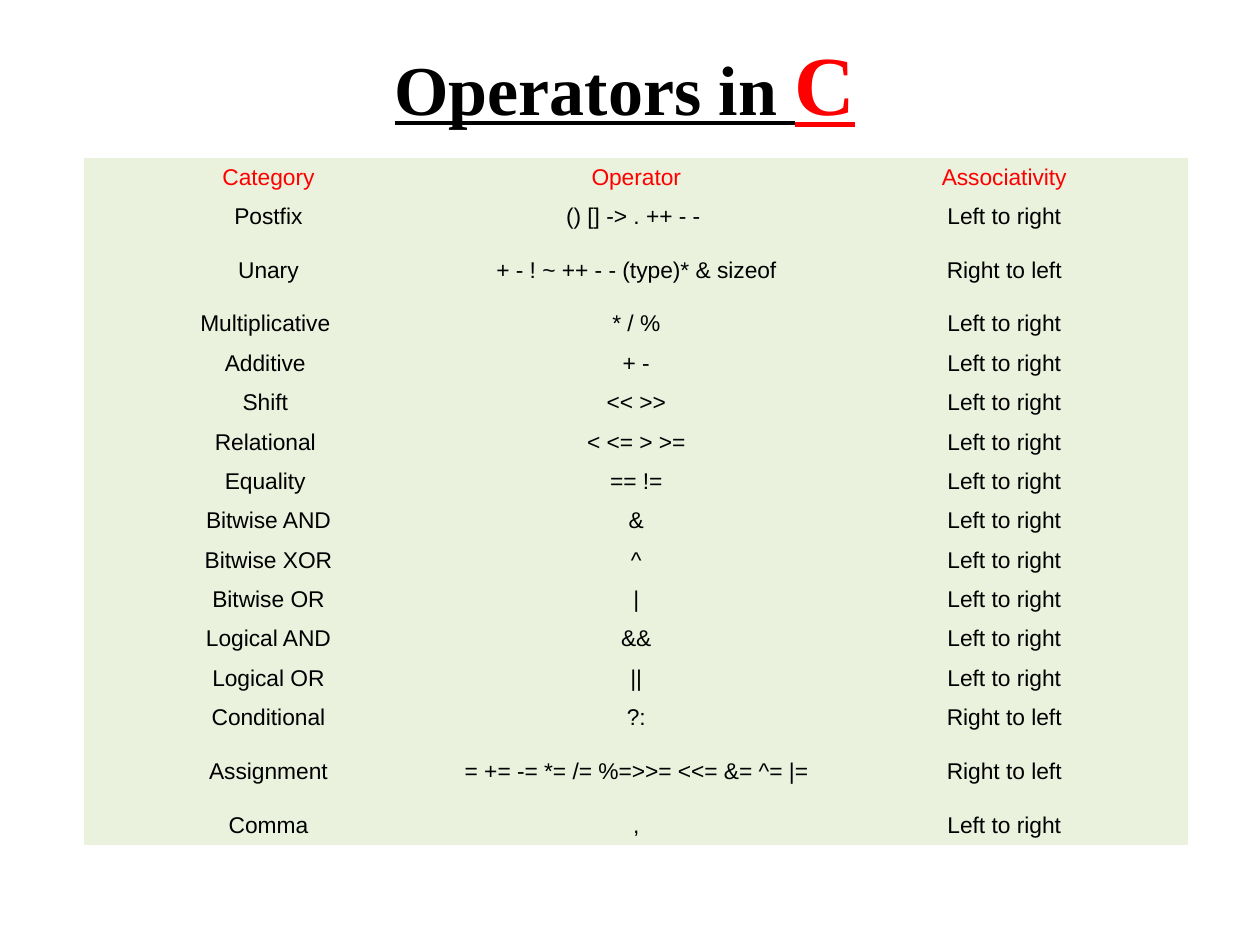
import typing

import pptx
import pptx.dml.color
import pptx.enum.text
import pptx.oxml.ns
import pptx.util

Inches = pptx.util.Inches

BLACK = "000000"
RED = "FF0000"
PALE_GREEN = "EAF1DD"
NO_STYLE_NO_GRID = "{2D5ABB26-0587-4C30-8999-92F81FD0307C}"

LEFT_TO_RIGHT = "Left to right"
RIGHT_TO_LEFT = "Right to left"

COLUMN_WIDTH = 2.92
TABLE_HEIGHT = 5.46
TALL_ROW = 0.54


class OperatorRow(typing.NamedTuple):
    category: str
    operators: str
    associativity: str = LEFT_TO_RIGHT
    tall: bool = False
    color: str = BLACK


OPERATOR_ROWS = [
    OperatorRow("Category", "Operator", "Associativity", color=RED),
    OperatorRow("Postfix", "() [] -> . ++ - - "),
    OperatorRow("Unary", "+ - ! ~ ++ - - (type)* & sizeof", RIGHT_TO_LEFT, tall=True),
    OperatorRow("Multiplicative ", "* / %"),
    OperatorRow("Additive ", "+ -"),
    OperatorRow("Shift ", "<< >>"),
    OperatorRow("Relational ", "< <= > >="),
    OperatorRow("Equality ", "== !="),
    OperatorRow("Bitwise AND", "&"),
    OperatorRow("Bitwise XOR", "^"),
    OperatorRow("Bitwise OR", "|"),
    OperatorRow("Logical AND", "&&"),
    OperatorRow("Logical OR", "||"),
    OperatorRow("Conditional", "?:", RIGHT_TO_LEFT),
    OperatorRow("Assignment", "= += -= *= /= %=>>= <<= &= ^= |=", RIGHT_TO_LEFT, tall=True),
    OperatorRow("Comma", ","),
]


def rgb(color: str) -> pptx.dml.color.RGBColor:
    return pptx.dml.color.RGBColor.from_string(color)


def add_span(para, text: str, font: str, size: float, color: str, heading: bool = False) -> None:
    """Add one run; a heading run is bold and underlined."""
    span = para.add_run()
    span.text = text
    span.font.name = font
    span.font.size = pptx.util.Pt(size)
    span.font.color.rgb = rgb(color)
    span.font.bold = heading
    span.font.underline = heading


def add_title(page) -> None:
    box = page.shapes.add_textbox(Inches(0.5), Inches(0.55), Inches(8.92), Inches(0.78))
    frame = box.text_frame
    frame.word_wrap = True
    frame.auto_size = pptx.enum.text.MSO_AUTO_SIZE.NONE
    frame.vertical_anchor = pptx.enum.text.MSO_ANCHOR.BOTTOM
    frame.margin_bottom = Inches(0.28)
    para = frame.paragraphs[0]
    para.alignment = pptx.enum.text.PP_ALIGN.CENTER
    add_span(para, "Operators in ", "Times New Roman", 40, BLACK, heading=True)
    add_span(para, "C", "Times New Roman", 48, RED, heading=True)


def fill_cell(cell, text: str, color: str) -> None:
    cell.fill.solid()
    cell.fill.fore_color.rgb = rgb(PALE_GREEN)
    cell.vertical_anchor = pptx.enum.text.MSO_ANCHOR.MIDDLE
    cell.margin_left = cell.margin_right = Inches(0.07)
    cell.margin_top = cell.margin_bottom = Inches(0.04)
    para = cell.text_frame.paragraphs[0]
    para.alignment = pptx.enum.text.PP_ALIGN.CENTER
    add_span(para, text, "Arial", 13, color)


def add_operator_table(page, rows: list[OperatorRow]) -> None:
    frame = page.shapes.add_table(
        len(rows), 3, Inches(0.67), Inches(1.25), Inches(3 * COLUMN_WIDTH), Inches(TABLE_HEIGHT)
    )
    style = next(frame.element.iter(pptx.oxml.ns.qn("a:tableStyleId")))
    style.text = NO_STYLE_NO_GRID
    table = frame.table
    table.first_row = table.horz_banding = False
    for column in table.columns:
        column.width = Inches(COLUMN_WIDTH)

    tall_count = sum(row.tall for row in rows)
    plain_height = (TABLE_HEIGHT - tall_count * TALL_ROW) / (len(rows) - tall_count)
    for index, row in enumerate(rows):
        table.rows[index].height = Inches(TALL_ROW if row.tall else plain_height)
        for column, text in enumerate((row.category, row.operators, row.associativity)):
            fill_cell(table.cell(index, column), text, row.color)


def main() -> None:
    deck = pptx.Presentation()
    deck.slide_width = Inches(10)
    deck.slide_height = Inches(7.5)
    page = deck.slides.add_slide(deck.slide_layouts[6])
    add_title(page)
    add_operator_table(page, OPERATOR_ROWS)
    deck.save("out.pptx")


if __name__ == "__main__":
    main()
